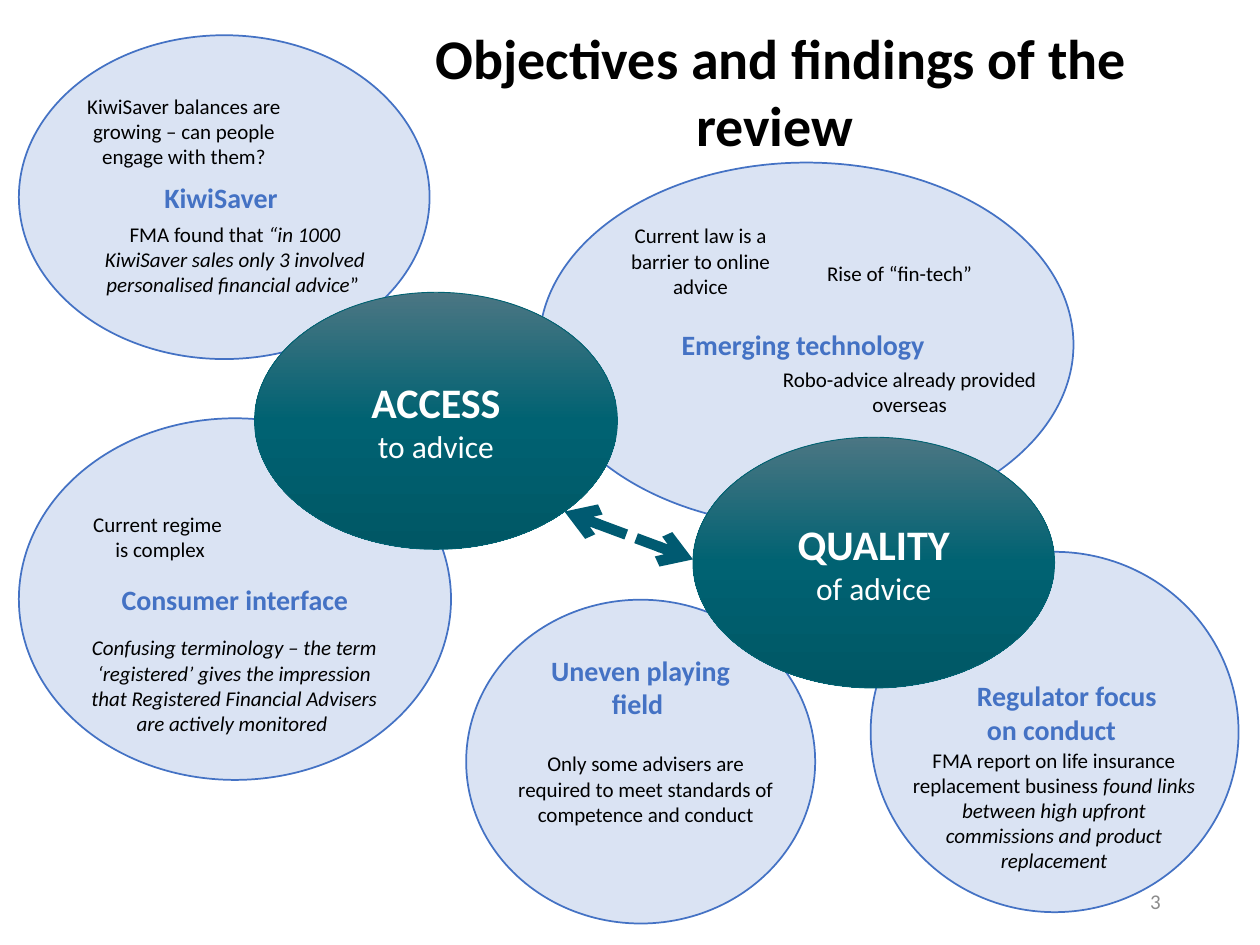
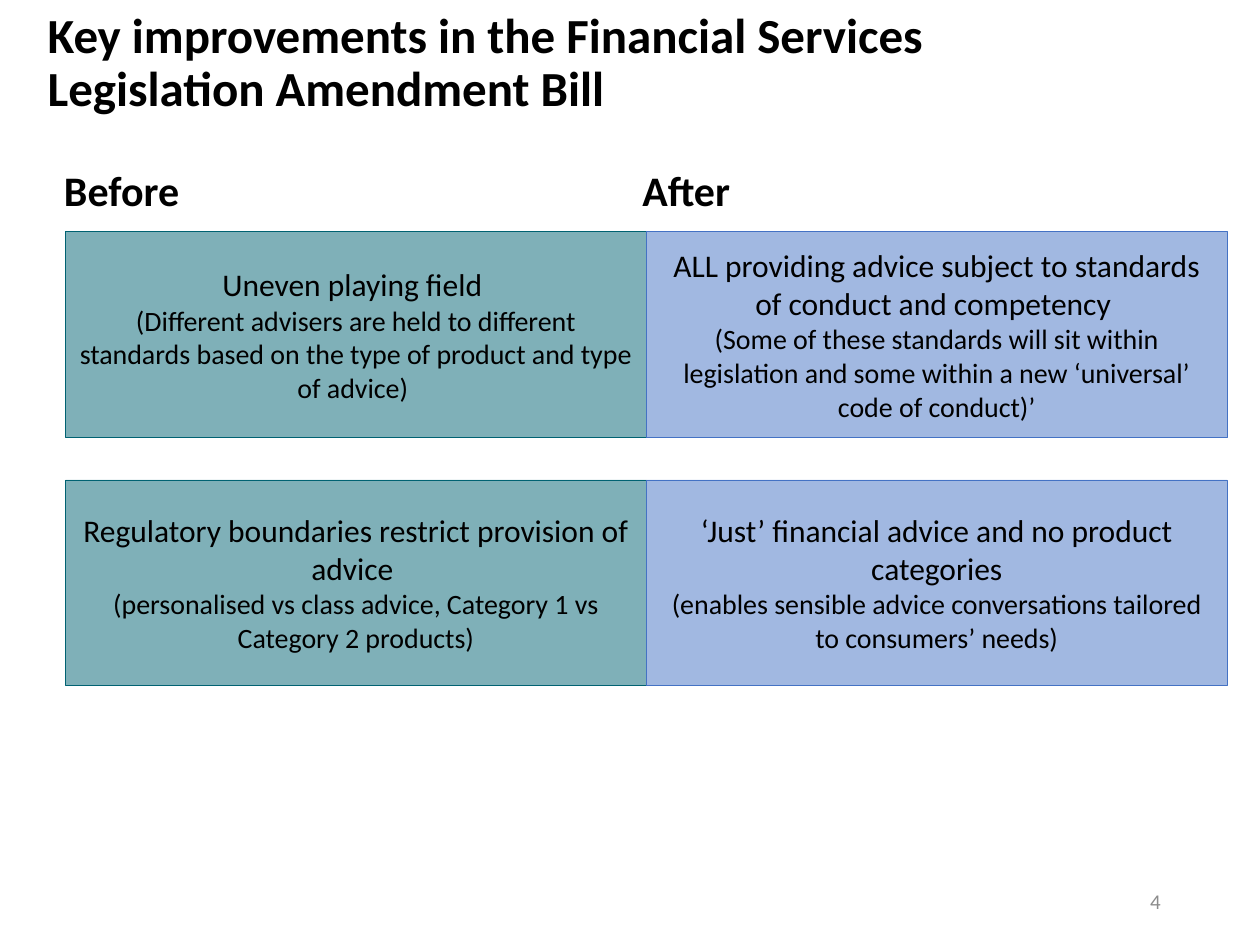
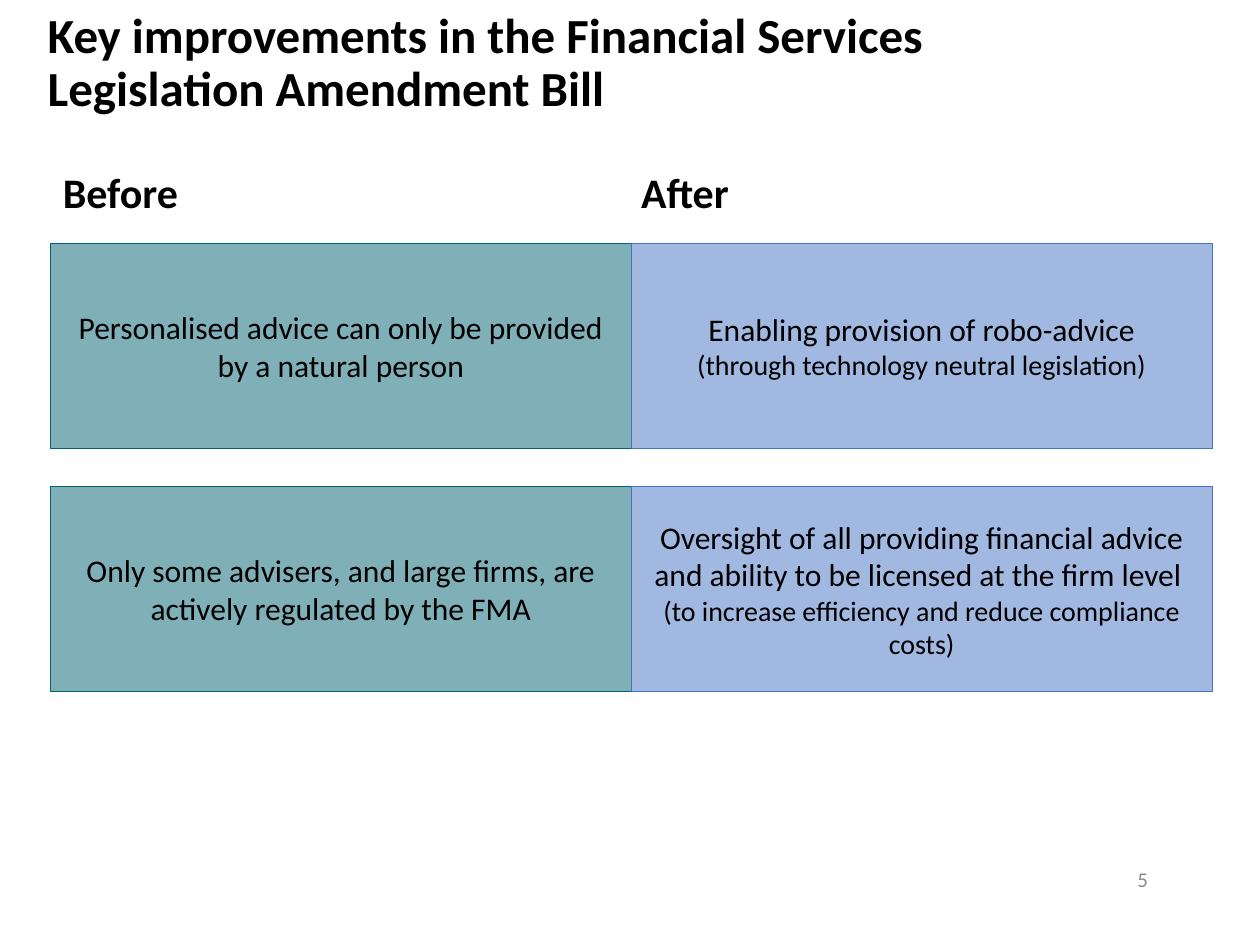
import copy
import lxml.etree
import pptx
import pptx.dml.color
import pptx.enum.dml
import pptx.enum.shapes
import pptx.enum.text
import pptx.oxml.ns
import pptx.util

COLS, ROWS = 100, 75
BLACK, WHITE, GREY = "000000", "FFFFFF", "8C8C8C"
BLUE, PALE, TEAL, DEEP = "4472C4", "DAE3F3", "006272", "005A71"
FADE = [(0, "4B7683"), (0.5, TEAL), (1, "005765")]
ALIGN = pptx.enum.text.PP_ALIGN
ANCHOR = pptx.enum.text.MSO_ANCHOR
SHAPE = pptx.enum.shapes.MSO_SHAPE
qn = pptx.oxml.ns.qn

HEAD = dict(size=32, bold=True)
TITLE = dict(size=28, bold=True)
LABEL = dict(size=24, bold=True)
TOPIC = dict(size=16, bold=True, color=BLUE)
NOTE = dict(size=12)
ITALIC = dict(size=12, italic=True)
MAIN = dict(size=18)
MINOR = dict(size=16)
PAGE = dict(size=12, color=GREY)


def rgb(code):
    return pptx.dml.color.RGBColor.from_string(code)


def put(item, **vals):
    for name, val in vals.items():
        setattr(item, name, val)


def child(node, tag, **attrs):
    return lxml.etree.SubElement(node, qn(tag), attrs)


class Deck:
    def __init__(self):
        self.file = pptx.Presentation()
        put(self.file, slide_width=pptx.util.Inches(10), slide_height=pptx.util.Inches(7.5))
        self.slide = None

    def new(self):
        self.slide = self.file.slides.add_slide(self.file.slide_layouts[6])

    def grid(self, *spots):
        units = self.file.slide_width / COLS, self.file.slide_height / ROWS
        return [round(spot * units[n % 2]) for n, spot in enumerate(spots)]

    def letter(self, shape, paras, align=ALIGN.CENTER, anchor=ANCHOR.MIDDLE, space=None, indent=0, top=0.05):
        frame = shape.text_frame
        put(frame, word_wrap=True, vertical_anchor=anchor, margin_top=pptx.util.Inches(top))
        for n, runs in enumerate(paras):
            para = frame.add_paragraph() if n else frame.paragraphs[0]
            put(para, alignment=align, line_spacing=space)
            if indent:
                para._p.get_or_add_pPr().set("indent", str(pptx.util.Pt(indent)))
            for words, style in runs:
                run = para.add_run()
                run.text = words
                look = dict(name="Calibri", bold=False, italic=False, color=BLACK) | style
                run.font.color.rgb = rgb(look.pop("color"))
                put(run.font, **look | dict(size=pptx.util.Pt(look["size"])))

    def text(self, at, paras, **form):
        self.letter(self.slide.shapes.add_textbox(*self.grid(*at)), paras, **form)

    def shape(self, kind, at, fill, edge, width, paras, **form):
        shape = self.slide.shapes.add_shape(kind, *self.grid(*at))
        shape.shadow.inherit = False
        shape.line.color.rgb = rgb(edge)
        shape.line.width = pptx.util.Pt(width)
        if isinstance(fill, list):
            self.fade(shape, fill)
        else:
            shape.fill.solid()
            shape.fill.fore_color.rgb = rgb(fill)
        self.letter(shape, paras, **form)
        return shape

    def fade(self, shape, stops):
        shape.fill.gradient()
        shape.fill.gradient_angle = 270
        group = shape._element.spPr.find(".//" + qn("a:gsLst"))
        group.append(copy.deepcopy(group[-1]))
        for stop, (place, code) in zip(shape.fill.gradient_stops, stops):
            stop.position = place
            stop.color.rgb = rgb(code)

    def bubble(self, at, words, **form):
        self.shape(SHAPE.OVAL, at, PALE, BLUE, 1, [[(words, TOPIC)]], **form)

    def hub(self, at, word, rest):
        big, small = LABEL | dict(color=WHITE), MAIN | dict(color=WHITE)
        self.shape(SHAPE.OVAL, at, FADE, TEAL, 0.5, [[(word, big)], [(rest, small)]])

    def panel(self, at, tint, paras):
        shape = self.shape(SHAPE.RECTANGLE, at, tint, tint, 0.5, paras)
        shade = shape._element.spPr.find(qn("a:solidFill"))[0]
        child(shade, "a:alpha", val="50000")

    def arrow(self, start, end):
        kind = pptx.enum.shapes.MSO_CONNECTOR.STRAIGHT
        link = self.slide.shapes.add_connector(kind, *self.grid(*start, *end))
        link.line.color.rgb = rgb(DEEP)
        put(link.line, width=pptx.util.Pt(6), dash_style=pptx.enum.dml.MSO_LINE.SQUARE_DOT)
        props = link._element.spPr
        edge = props.find(qn("a:ln"))
        for tip in ("a:headEnd", "a:tailEnd"):
            child(edge, tip, type="arrow")
        child(props, "a:effectLst")

    def page(self, num, left=70.6, top=69.5):
        self.text((left, top, 22.5, 4), [[(str(num), PAGE)]], align=ALIGN.RIGHT)

    def contrast(self, num, head, left, top, step, pairs, foot):
        self.new()
        side = dict(align=ALIGN.LEFT, space=0.9)
        title = "Key improvements in the Financial Services Legislation Amendment Bill"
        self.text((2.8, 1.6, 86.2, 7), [[(title, TITLE)]], **side)
        for n, word in enumerate(("Before", "After")):
            spot = head[0] + n * 45.9, head[1], 40, 5
            self.text(spot, [[(word, LABEL)]], anchor=ANCHOR.TOP, **side)
        for row, pair in enumerate(pairs):
            for col, (lines, tint) in enumerate(zip(pair, (TEAL, BLUE))):
                spot = left + col * 46.1, top + row * step, 46.1, 16.3
                paras = [[(line, look)] for line, look in zip(lines, (MAIN, MINOR))]
                self.panel(spot, tint, paras)
        self.page(num, *foot)


def review(deck):
    deck.new()
    deck.arrow((44.8, 40.6), (55, 44.4))
    deck.bubble((1.5, 33.2, 34.3, 28.7), "Consumer interface")
    deck.bubble((42.8, 12.9, 42.4, 28.9), "Emerging technology ")
    deck.bubble((37, 47.6, 27.7, 25.7), "Uneven playing field ", anchor=ANCHOR.TOP)
    deck.bubble((69.1, 43.8, 29.2, 28.6), "Regulator focus on conduct ",
                anchor=ANCHOR.TOP, top=0.59, indent=14)
    deck.bubble((1.5, 2.8, 32.6, 25.7), "KiwiSaver ")
    deck.hub((20.2, 23.2, 28.8, 20.4), "ACCESS", "to advice")
    deck.hub((55, 34.7, 28.7, 19.9), "QUALITY", "of advice")
    deck.text((30.1, 2.8, 63.8, 8.8), [[("Objectives and findings of the review ", HEAD)]])
    notes = [
        ((60.7, 28.6, 23, 5), [[("Robo-advice already provided overseas", NOTE)]]),
        ((39.8, 59.1, 22.9, 7.1),
         [[("Only some advisers are required to meet standards of competence and conduct", NOTE)]]),
        ((5.3, 40.1, 14.8, 5), [[("Current regime ", NOTE)], [("is complex", NOTE)]]),
        ((5, 6.9, 19.2, 9.4),
         [[("KiwiSaver balances are growing – can people engage with them?", NOTE)]]),
        ((7.2, 17.1, 22.9, 9.4),
         [[("FMA found that ", NOTE),
           ("“in 1000 KiwiSaver sales only 3 involved personalised financial advice", ITALIC),
           ("” ", NOTE)]]),
        ((6, 49.9, 25.2, 9.1),
         [[("Confusing terminology – the term ‘registered’ gives the impression that "
            "Registered Financial Advisers are actively monitored ", ITALIC)]]),
        ((64.3, 20.2, 14.2, 3), [[("Rise of “fin-tech”", NOTE)]]),
        ((48.5, 17.2, 14.2, 7.1), [[("Current law is a barrier to online advice", NOTE)]]),
        ((71.4, 58.8, 24.5, 11.1),
         [[("FMA report on life insurance replacement business ", NOTE),
           ("found links between high upfront commissions and product replacement", ITALIC)]]),
    ]
    for spot, paras in notes:
        deck.text(spot, paras, anchor=ANCHOR.TOP)
    deck.page(3)


def main():
    deck = Deck()
    review(deck)
    deck.contrast(4, (4.1, 13), 5.2, 18.4, 19.7, [
        (("Uneven playing field ",
          "(Different advisers are held to different standards based on the type of product "
          "and type of advice) "),
         ("ALL providing advice subject to standards of conduct and competency ",
          "(Some of these standards will sit within legislation and some within a new "
          "‘universal’ code of conduct)’")),
        (("Regulatory boundaries restrict provision of advice ",
          "(personalised vs class advice, Category 1 vs Category 2 products)"),
         ("‘Just’ financial advice and no product categories",
          "(enables sensible advice conversations tailored to consumers’ needs)")),
    ], (70.6, 69.5))
    deck.contrast(5, (4, 13.2), 4, 19.3, 19.3, [
        (("Personalised advice can only be provided by a natural person",),
         ("Enabling provision of robo-advice", "(through technology neutral legislation)")),
        (("Only some advisers, and large firms, are actively regulated by the FMA",),
         ("Oversight of all providing financial advice and ability to be licensed at the firm level ",
          "(to increase efficiency and reduce compliance costs)")),
    ], (69.6, 67.8))
    deck.file.save("out.pptx")


if __name__ == "__main__":
    main()
